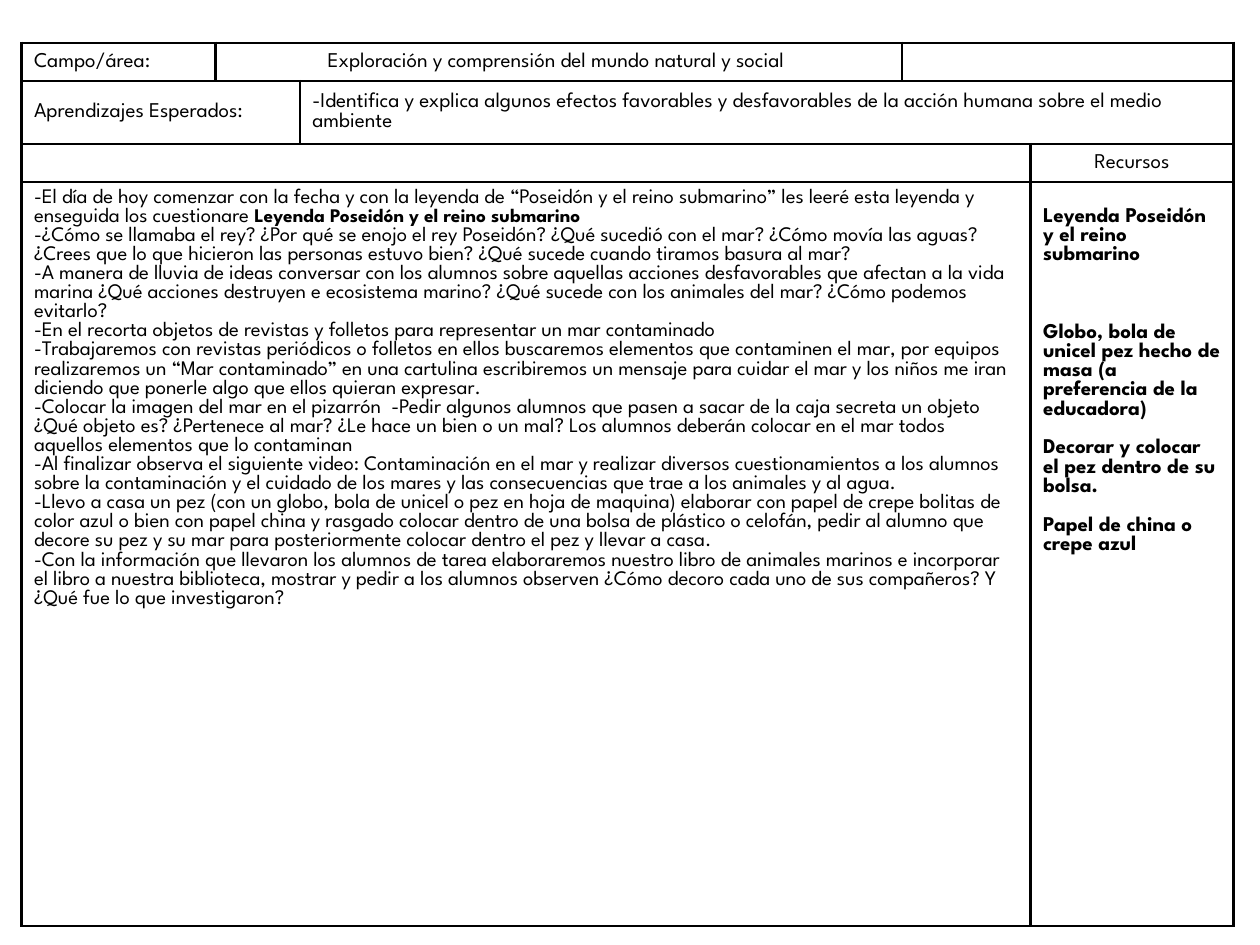
from dataclasses import dataclass

from lxml.etree import SubElement
from pptx import Presentation
from pptx.dml.color import RGBColor
from pptx.enum.text import MSO_ANCHOR as Anchor, PP_ALIGN as Align
from pptx.oxml.ns import qn
from pptx.util import Inches, Pt


@dataclass(frozen=True)
class Theme:
    """Colours, font and sizes of the lesson plan."""
    font: str = "League Spartan"
    ink: RGBColor = RGBColor(0, 0, 0)
    paper: RGBColor = RGBColor(255, 255, 255)
    label: float = 12
    activity: float = 11.8
    legend: float = 11
    blank_line: float = 11.04
    border: float = 1.5


COLUMNS = [1.54, 0.67, 4.78, 1.02, 1.61]
ROWS = [0.29, 0.5, 0.29, 5.9]
MERGES = [(0, 1, 2), (0, 3, 4), (1, 0, 1), (1, 2, 4), (2, 0, 3), (3, 0, 3)]
LEGEND = "Leyenda Poseidón y el reino submarino"
HEADINGS = [
    (0, 0, "Campo/área:", Align.LEFT),
    (0, 1, "Exploración y comprensión del mundo natural y social ", Align.CENTER),
    (1, 0, "Aprendizajes Esperados:", Align.LEFT),
    (1, 2, "-Identifica y explica algunos efectos favorables y desfavorables de la "
           "acción humana sobre el medio ambiente", Align.LEFT),
    (2, 4, "Recursos", Align.CENTER),
]
OPENING = ("-El día de hoy comenzar con la fecha y con la leyenda de “Poseidón y el reino "
           "submarino” les leeré esta leyenda y enseguida los cuestionare ")
ACTIVITIES = [
    "-¿Cómo se llamaba el rey? ¿Por qué se enojo el rey Poseidón? ¿Qué sucedió con el mar? "
    "¿Cómo movía las aguas? ¿Crees que lo que hicieron las personas estuvo bien? ¿Qué sucede "
    "cuando tiramos basura al mar?",
    "-A manera de lluvia de ideas conversar con los alumnos sobre aquellas acciones "
    "desfavorables que afectan a la vida marina ¿Qué acciones destruyen e ecosistema marino? "
    "¿Qué sucede con los animales del mar? ¿Cómo podemos evitarlo?",
    "-En el recorta objetos de revistas y folletos para representar un mar contaminado",
    "-Trabajaremos con revistas periódicos o folletos en ellos buscaremos elementos que "
    "contaminen el mar, por equipos realizaremos un “Mar contaminado” en una cartulina "
    "escribiremos un mensaje para cuidar el mar y los niños me iran diciendo que ponerle algo "
    "que ellos quieran expresar.",
    "-Colocar la imagen del mar en el pizarrón  -Pedir algunos alumnos que pasen a sacar de la "
    "caja secreta un objeto ¿Qué objeto es? ¿Pertenece al mar? ¿Le hace un bien o un mal? Los "
    "alumnos deberán colocar en el mar todos aquellos elementos que lo contaminan",
    "-Al finalizar observa el siguiente video: Contaminación en el mar y realizar diversos "
    "cuestionamientos a los alumnos sobre la contaminación y el cuidado de los mares y las "
    "consecuencias que trae a los animales y al agua.",
    "-Llevo a casa un pez (con un globo, bola de unicel o pez en hoja de maquina) elaborar con "
    "papel de crepe bolitas de color azul o bien con papel china y rasgado colocar dentro de "
    "una bolsa de plástico o celofán, pedir al alumno que decore su pez y su mar para "
    "posteriormente colocar dentro el pez y llevar a casa.",
    "-Con la información que llevaron los alumnos de tarea elaboraremos nuestro libro de "
    "animales marinos e incorporar el libro a nuestra biblioteca, mostrar y pedir a los alumnos "
    "observen ¿Cómo decoro cada uno de sus compañeros? Y ¿Qué fue lo que investigaron?",
]
RESOURCES = [
    (0, LEGEND),
    (3, "Globo, bola de unicel pez hecho de masa (a preferencia de la educadora)"),
    (1, "Decorar y colocar el pez dentro de su bolsa."),
    (1, "Papel de china o crepe azul"),
]


class PlanSlide:
    """Holds the theme and the slide that the plan is drawn on."""

    def __init__(self, slide, theme):
        self.slide = slide
        self.theme = theme

    def grid(self, left, top, columns, rows, merges):
        """Add a bordered table with the given spans."""
        frame = self.slide.shapes.add_table(
            len(rows), len(columns), Inches(left), Inches(top),
            Inches(sum(columns)), Inches(sum(rows)))
        table = frame.table
        for flag in ("first_row", "horz_banding"):
            setattr(table, flag, False)
        for column, width in zip(table.columns, columns):
            column.width = Inches(width)
        for row, height in zip(table.rows, rows):
            row.height = Inches(height)
        for cell in table.iter_cells():
            self.dress(cell)
        for row, first, last in merges:
            table.cell(row, first).merge(table.cell(row, last))
        return table

    def dress(self, cell):
        """Give a cell its borders, fill and empty-line size."""
        properties = cell._tc.get_or_add_tcPr()
        for side in ("lnL", "lnR", "lnT", "lnB"):
            line = SubElement(properties, qn(f"a:{side}"), w=str(Pt(self.theme.border)))
            fill = SubElement(line, qn("a:solidFill"))
            SubElement(fill, qn("a:srgbClr"), val=str(self.theme.ink))
        cell.fill.solid()
        cell.fill.fore_color.rgb = self.theme.paper
        end = cell.text_frame.paragraphs[0]._p.get_or_add_endParaRPr()
        end.set("sz", str(int(self.theme.label * 100)))

    def paragraph(self, cell, pieces, **layout):
        """Write (text, size, bold) pieces as the cell's next paragraph."""
        frame = cell.text_frame
        paragraph = frame.add_paragraph() if frame.text else frame.paragraphs[0]
        for name, value in layout.items():
            setattr(paragraph, name, value)
        for text, size, bold in pieces:
            run = paragraph.add_run()
            run.text = text
            formats = {"name": self.theme.font, "size": Pt(size), "bold": bold}
            for name, value in formats.items():
                setattr(run.font, name, value)
            run.font.color.rgb = self.theme.ink


def main():
    """Build the lesson plan slide."""
    deck = Presentation()
    deck.slide_width, deck.slide_height = Inches(10), Inches(7.5)
    theme = Theme()
    plan = PlanSlide(deck.slides.add_slide(deck.slide_layouts[6]), theme)
    table = plan.grid(0.17, 0.34, COLUMNS, ROWS, MERGES)

    for row, column, heading, alignment in HEADINGS:
        cell = table.cell(row, column)
        cell.vertical_anchor = Anchor.MIDDLE
        plan.paragraph(cell, [(heading, theme.label, False)], alignment=alignment)

    activities = table.cell(3, 0)
    plan.paragraph(activities, [(OPENING, theme.activity, False),
                                (LEGEND, theme.legend, True)])
    for activity in ACTIVITIES:
        plan.paragraph(activities, [(activity, theme.activity, False)])

    resources = table.cell(3, 4)
    resources.margin_top = Inches(0.2)
    for gap, resource in RESOURCES:
        plan.paragraph(resources, [(resource, theme.label, True)],
                       space_before=Pt(gap * theme.blank_line))

    deck.save("out.pptx")


if __name__ == "__main__":
    main()
